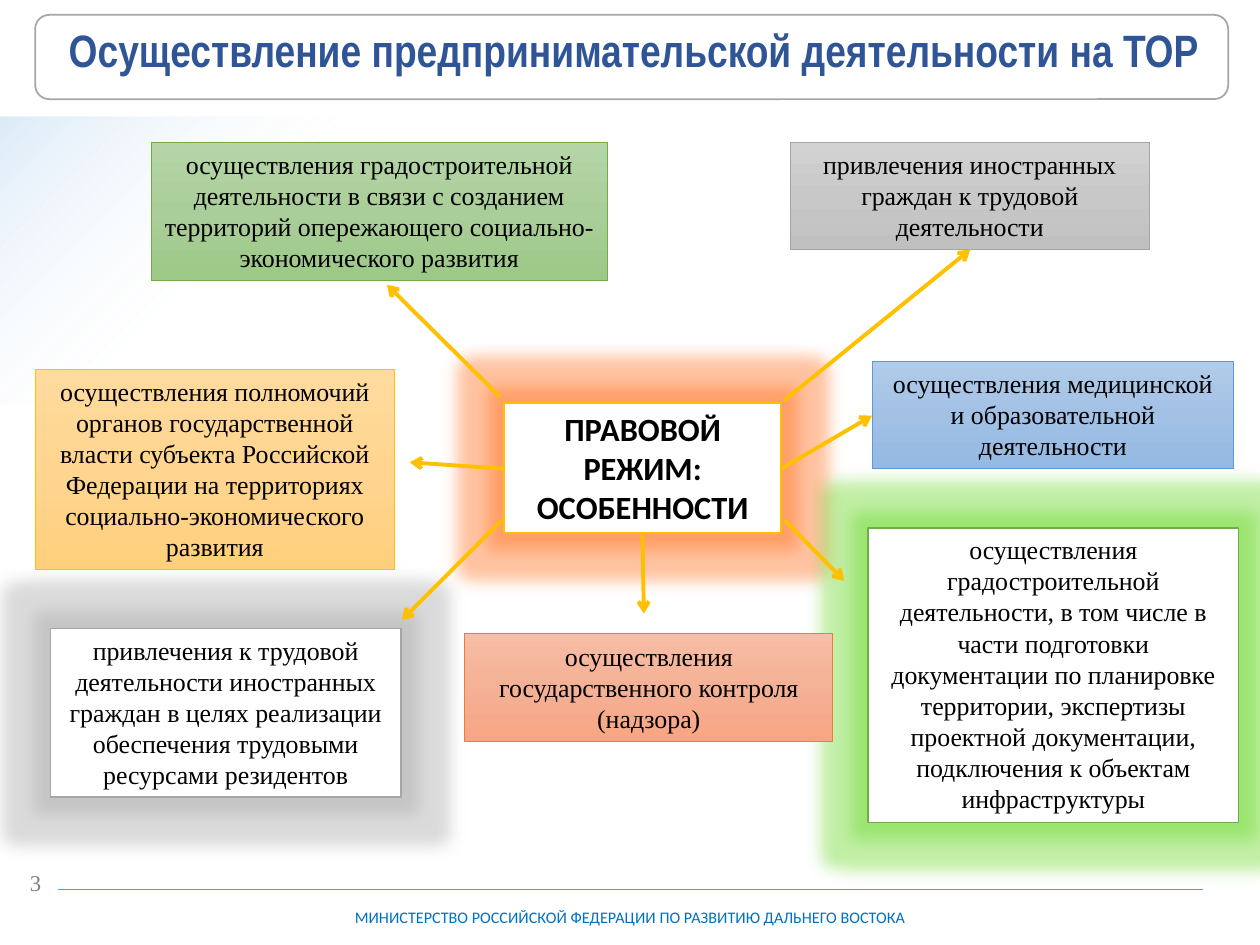
"""Builds a slide on the features of the legal regime in advanced development territories."""
from lxml import etree
from pptx import Presentation
from pptx.dml.color import RGBColor
from pptx.enum.shapes import MSO_CONNECTOR, MSO_SHAPE
from pptx.enum.text import MSO_ANCHOR, MSO_AUTO_SIZE, PP_ALIGN
from pptx.oxml.ns import qn
from pptx.util import Cm, Pt

RECTANGLE, ROUNDED = MSO_SHAPE.RECTANGLE, MSO_SHAPE.ROUNDED_RECTANGLE
STRAIGHT = MSO_CONNECTOR.STRAIGHT
TOP, MIDDLE = MSO_ANCHOR.TOP, MSO_ANCHOR.MIDDLE
GROW, FIXED = MSO_AUTO_SIZE.SHAPE_TO_FIT_TEXT, MSO_AUTO_SIZE.NONE
CENTER = PP_ALIGN.CENTER

THEME = {
    "white": "FFFFFF",
    "frame": "A6A6A6",
    "rule": "5B9BD5",
    "arrow": "FFC000",
    "corner": [(0, "FFFFFF", 0), (50, "FFFFFF", 0), (100, "DCEBF8", 100)],
    "glow_radius": Cm(0.64),
    "glow_opacity": 40,
    "title": {"name": "Arial Narrow", "size": 25.9, "bold": True, "color": "2F5597"},
    "center": {"name": "Calibri", "size": 18.5, "bold": True, "color": "000000"},
    "box": {"name": "Times New Roman", "size": 14.8, "bold": False, "color": "000000"},
    "footer": {"name": "Calibri", "size": 9.2, "bold": False, "color": "0070C0"},
    "number": {"name": "Times New Roman", "size": 12.9, "bold": False, "color": "808080"},
}

LABELS = [
    ("title", (0.79, 0.36, 23.98, 1.4), 0.9,
     "Осуществление предпринимательской деятельности на ТОР"),
    ("footer", (5.13, 18.08, 15.14, 0.81), 1.0,
     "МИНИСТЕРСТВО РОССИЙСКОЙ ФЕДЕРАЦИИ ПО РАЗВИТИЮ ДАЛЬНЕГО ВОСТОКА"),
    ("number", (0.18, 17.42, 1.07, 0.76), 1.0, "3"),
]

BOXES = [
    {"style": "center", "at": (10.16, 8.13, 5.59, 2.62), "line": ("FFC000", 1), "glow": "FF6A14",
     "lines": ["ПРАВОВОЙ", "РЕЖИМ:", "ОСОБЕННОСТИ"]},
    {"at": (3.05, 2.87, 9.19, 2.79), "line": ("70AD47", 0.5),
     "gradient": ("B5D5A7", "AACE9A", "9CC987"),
     "lines": ["осуществления градостроительной деятельности в связи с созданием "
               "территорий опережающего социально-экономического развития"]},
    {"at": (0.71, 7.44, 7.24, 4.04), "line": ("FFC000", 0.5),
     "gradient": ("FFDB9E", "FFD590", "FFD07C"),
     "lines": ["осуществления полномочий органов государственной власти субъекта Российской "
               "Федерации на территориях социально-экономического развития"]},
    {"at": (15.93, 2.87, 7.24, 2.16), "line": ("A5A5A5", 0.5),
     "gradient": ("D2D2D2", "C8C8C8", "C0C0C0"),
     "lines": ["привлечения иностранных граждан к трудовой деятельности"]},
    {"at": (17.5, 10.64, 7.47, 5.94), "line": ("70AD47", 1), "glow": "65D821",
     "lines": ["осуществления градостроительной деятельности, в том числе в части подготовки "
               "документации по планировке территории, экспертизы проектной документации, "
               "подключения к объектам инфраструктуры"]},
    {"at": (9.37, 12.78, 7.42, 2.16), "line": ("ED7D31", 0.5),
     "gradient": ("F7BDA5", "F5B196", "F8A582"),
     "lines": ["осуществления государственного контроля (надзора)"]},
    {"at": (1.02, 12.67, 7.06, 3.4), "line": ("A5A5A5", 1), "glow": "A5A5A5",
     "lines": ["привлечения к трудовой деятельности иностранных граждан в целях реализации "
               "обеспечения трудовыми ресурсами резидентов"]},
    {"at": (17.58, 7.29, 7.29, 2.16), "line": ("5B9BD5", 0.5),
     "gradient": ("B1CBE9", "A3C1E5", "93B9E4"),
     "lines": ["осуществления медицинской и образовательной деятельности"]},
]

ARROWS = [
    (15.8, 8.08, 19.56, 5.03),
    (10.08, 8.0, 7.8, 5.74),
    (10.16, 9.45, 8.26, 9.32),
    (10.11, 10.49, 8.1, 12.5),
    (12.95, 10.77, 12.98, 12.37),
    (15.82, 10.49, 17.02, 11.71),
    (15.75, 9.45, 17.58, 8.38),
]


def add_element(parent, tag, **attributes):
    element = etree.SubElement(parent, qn(tag))
    for name, value in attributes.items():
        element.set(name, str(value))
    return element


def add_color(parent, color, opacity=100):
    element = add_element(parent, "a:srgbClr", val=color)
    if opacity < 100:
        add_element(element, "a:alpha", val=opacity * 1000)


def set_gradient(shape, stops, angle):
    shape.fill.gradient()
    shape.fill.gradient_angle = angle
    stop_list = shape.element.spPr.find(".//" + qn("a:gsLst"))
    for old_stop in list(stop_list):
        stop_list.remove(old_stop)
    for position, color, opacity in stops:
        add_color(add_element(stop_list, "a:gs", pos=position * 1000), color, opacity)


def set_solid(shape, color):
    shape.fill.solid()
    shape.fill.fore_color.rgb = RGBColor.from_string(color)


def set_line(shape, color, width):
    shape.line.color.rgb = RGBColor.from_string(color)
    shape.line.width = Pt(width)


def add_block(slide, kind, at):
    shape = slide.shapes.add_shape(kind, *map(Cm, at))
    shape.shadow.inherit = False
    return shape


def write_text(shape, lines, style, anchor, auto_size, spacing=1.0):
    frame = shape.text_frame
    frame_format = {"word_wrap": True, "vertical_anchor": anchor, "auto_size": auto_size}
    for name, value in frame_format.items():
        setattr(frame, name, value)
    frame.text = "\n".join(lines)
    font_format = {"name": style["name"], "size": Pt(style["size"]), "bold": style["bold"]}
    for paragraph in frame.paragraphs:
        paragraph.alignment = CENTER
        paragraph.line_spacing = spacing
        font = paragraph.runs[0].font
        for name, value in font_format.items():
            setattr(font, name, value)
        font.color.rgb = RGBColor.from_string(style["color"])


def add_box(slide, box):
    shape = add_block(slide, RECTANGLE, box["at"])
    if "gradient" in box:
        stops = [(index * 50, color, 100) for index, color in enumerate(box["gradient"])]
        set_gradient(shape, stops, 270)
    else:
        set_solid(shape, THEME["white"])
    set_line(shape, *box["line"])
    if "glow" in box:
        effects = shape.element.spPr.find(qn("a:effectLst"))
        glow = add_element(effects, "a:glow", rad=THEME["glow_radius"])
        add_color(glow, box["glow"], THEME["glow_opacity"])
    write_text(shape, box["lines"], THEME[box.get("style", "box")], TOP, GROW)


def add_line(slide, ends, color, width, arrow=False):
    connector = slide.shapes.add_connector(STRAIGHT, *map(Cm, ends))
    set_line(connector, color, width)
    if arrow:
        add_element(connector.line._get_or_add_ln(), "a:tailEnd", type="arrow")
    add_element(connector.element.spPr, "a:effectLst")


def add_backdrop(slide):
    corner = add_block(slide, RECTANGLE, (0, 2.36, 10.44, 5.79))
    set_gradient(corner, THEME["corner"], 135)
    corner.line.fill.background()
    title_frame = add_block(slide, ROUNDED, (0.71, 0.3, 24.05, 1.7))
    set_solid(title_frame, THEME["white"])
    add_element(title_frame.element.spPr.find(".//" + qn("a:srgbClr")), "a:alpha", val=70000)
    set_line(title_frame, THEME["frame"], 1)
    add_line(slide, (1.17, 17.93, 24.26, 17.93), THEME["rule"], 0.5)


def main():
    presentation = Presentation()
    presentation.slide_width, presentation.slide_height = Cm(25.4), Cm(19.05)
    slide = presentation.slides.add_slide(presentation.slide_layouts[6])
    add_backdrop(slide)
    for style, at, spacing, text in LABELS:
        label = slide.shapes.add_textbox(*map(Cm, at))
        write_text(label, [text], THEME[style], MIDDLE, FIXED, spacing)
    for box in BOXES:
        add_box(slide, box)
    for ends in ARROWS:
        add_line(slide, ends, THEME["arrow"], 2.25, arrow=True)
    presentation.save("out.pptx")


if __name__ == "__main__":
    main()
